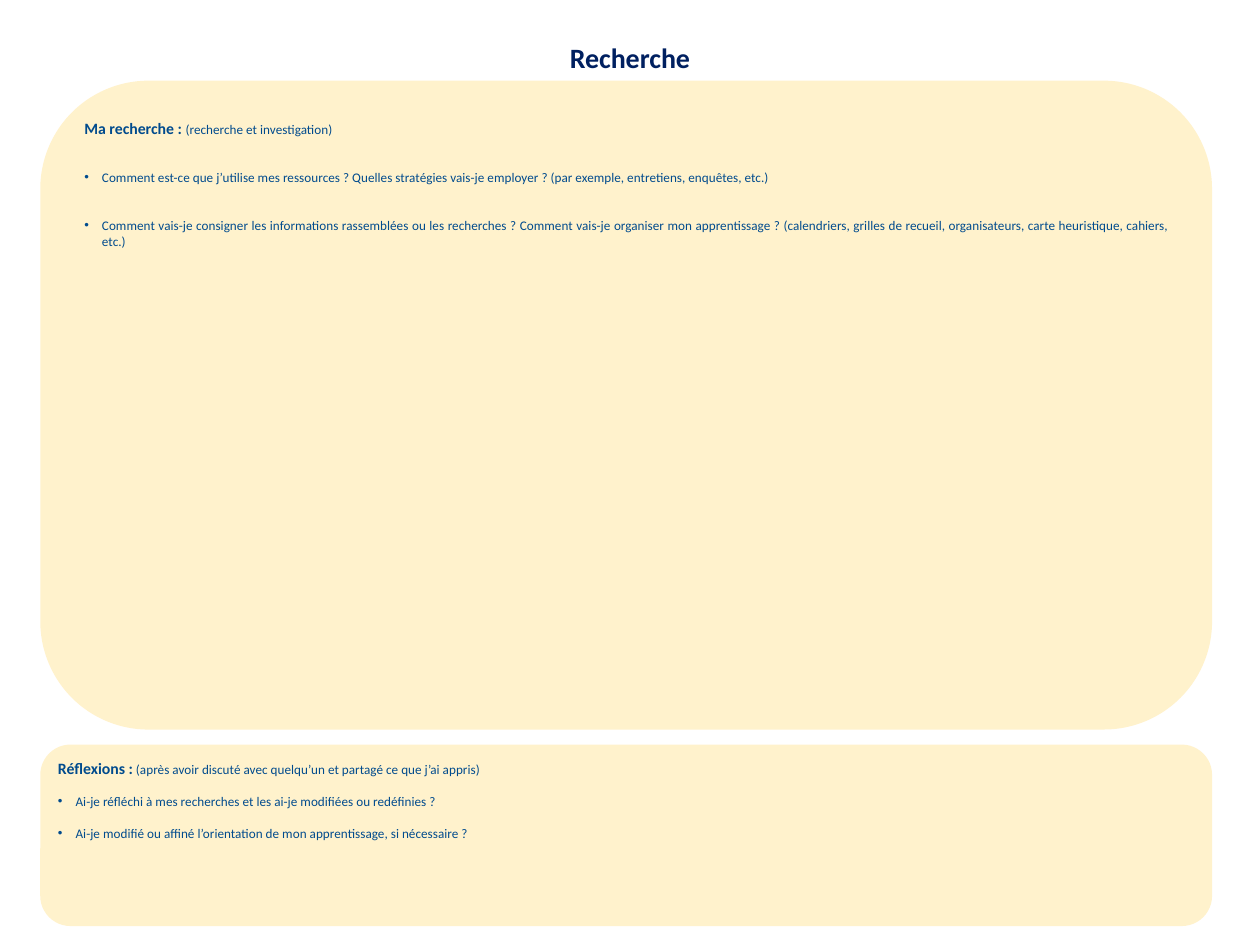
from dataclasses import dataclass

from lxml.etree import SubElement
from pptx import Presentation
from pptx.dml.color import RGBColor
from pptx.enum.shapes import MSO_SHAPE
from pptx.enum.text import MSO_ANCHOR, MSO_AUTO_SIZE, PP_ALIGN
from pptx.oxml.ns import qn
from pptx.util import Inches, Pt


@dataclass(frozen=True)
class Theme:
    font: str = "Calibri"
    title_color: RGBColor = RGBColor(0x00, 0x20, 0x60)
    text_color: RGBColor = RGBColor(0x00, 0x4B, 0x8D)
    panel_color: RGBColor = RGBColor(0xFF, 0xF2, 0xCC)
    title_size: float = 16
    heading_size: float = 9
    body_size: float = 7.5
    line_height: float = 9.15


THEME = Theme()
SLIDE_W, SLIDE_H = Inches(10), Inches(7.5)
PANEL_LEFT, PANEL_WIDTH = Inches(0.32), Inches(9.3)
BULLET_INDENT = Inches(0.14)


def format_run(r, size, color, bold=False):
    r.font.name = THEME.font
    r.font.size = Pt(size)
    r.font.bold = bold
    r.font.color.rgb = color


def add_run(p, text, size, bold=False):
    r = p.add_run()
    r.text = text
    format_run(r, size, THEME.text_color, bold)


def add_bullet(p):
    pPr = p._p.get_or_add_pPr()
    pPr.set("marL", str(BULLET_INDENT))
    pPr.set("indent", str(-BULLET_INDENT))
    SubElement(pPr, qn("a:buFont"), typeface="Arial")
    SubElement(pPr, qn("a:buChar"), char="•")


def set_title(slide, text):
    sp = slide.shapes.title
    sp.left, sp.top, sp.width, sp.height = 0, Inches(0.27), SLIDE_W, Inches(0.37)
    tf = sp.text_frame
    tf.text = text
    tf.auto_size = MSO_AUTO_SIZE.NONE
    tf.vertical_anchor = MSO_ANCHOR.MIDDLE
    p = tf.paragraphs[0]
    p.alignment = PP_ALIGN.CENTER
    format_run(p.runs[0], THEME.title_size, THEME.title_color, bold=True)


def add_panel(slide, top, height, heading, hint, questions, align, gap_lines, insets):
    """Rounded panel: heading with a hint, then bulleted questions gap_lines apart."""
    sp = slide.shapes.add_shape(MSO_SHAPE.ROUNDED_RECTANGLE, PANEL_LEFT,
                                Inches(top), PANEL_WIDTH, Inches(height))
    sp.shadow.inherit = False
    sp.fill.solid()
    sp.fill.fore_color.rgb = THEME.panel_color
    sp.line.fill.background()

    tf = sp.text_frame
    tf.word_wrap = True
    tf.vertical_anchor = MSO_ANCHOR.TOP
    tf.margin_left = tf.margin_right = Inches(insets[0])
    tf.margin_top = tf.margin_bottom = Inches(insets[1])

    p = tf.paragraphs[0]
    p.alignment = align
    add_run(p, heading, THEME.heading_size, bold=True)
    add_run(p, hint, THEME.body_size)
    for question in questions:
        p = tf.add_paragraph()
        p.alignment = align
        p.space_before = Pt(gap_lines * THEME.line_height)
        add_bullet(p)
        add_run(p, question, THEME.body_size)


def main():
    prs = Presentation()
    prs.slide_width, prs.slide_height = SLIDE_W, SLIDE_H
    slide = prs.slides.add_slide(prs.slide_layouts.get_by_name("Title Only"))

    set_title(slide, "Recherche")
    add_panel(
        slide, 0.64, 5.15, "Ma recherche : ", "(recherche et investigation)",
        ["Comment est-ce que j’utilise mes ressources ? Quelles stratégies "
         "vais-je employer ? (par exemple, entretiens, enquêtes, etc.)",
         "Comment vais-je consigner les informations rassemblées ou les "
         "recherches ? Comment vais-je organiser mon apprentissage ? "
         "(calendriers, grilles de recueil, organisateurs, carte heuristique, "
         "cahiers, etc.)"],
        PP_ALIGN.JUSTIFY, gap_lines=2, insets=(0.1, 0.05))
    add_panel(
        slide, 5.91, 1.44, "Réflexions :",
        " (après avoir discuté avec quelqu’un et partagé ce que j’ai appris)",
        ["Ai-je réfléchi à mes recherches et les ai-je modifiées ou redéfinies ?",
         "Ai-je modifié ou affiné l’orientation de mon apprentissage, "
         "si nécessaire ?"],
        PP_ALIGN.LEFT, gap_lines=1, insets=(0.07, 0.04))

    prs.save("out.pptx")


if __name__ == "__main__":
    main()
